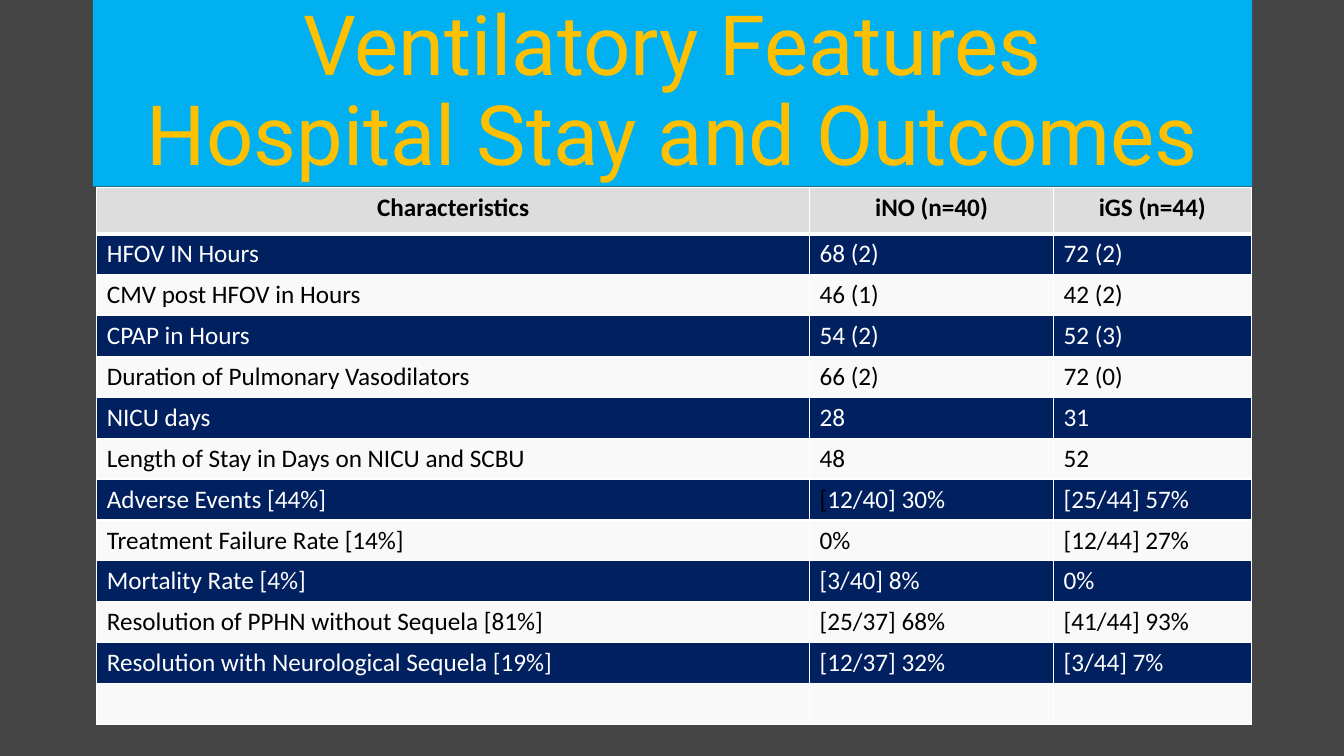
"""Build the slide on ventilatory features, hospital stay and outcomes."""
from dataclasses import dataclass

from lxml.etree import SubElement
from pptx import Presentation
from pptx.dml.color import RGBColor
from pptx.enum.text import MSO_ANCHOR as Anchor, MSO_AUTO_SIZE as AutoSize, PP_ALIGN as Align
from pptx.oxml.ns import qn
from pptx.util import Inches, Pt

WHITE = RGBColor(0xFF, 0xFF, 0xFF)
BLACK = RGBColor(0x00, 0x00, 0x00)
CHARCOAL = RGBColor(0x45, 0x45, 0x45)
SKY = RGBColor(0x00, 0xB0, 0xF0)
AMBER = RGBColor(0xFF, 0xC0, 0x00)
NAVY = RGBColor(0x00, 0x20, 0x60)
PALE = RGBColor(0xF9, 0xF9, 0xF9)
SILVER = RGBColor(0xDD, 0xDD, 0xDD)

COLUMN_WIDTHS = (7.07, 2.42, 1.96)
HEADER_HEIGHT, ROW_HEIGHT = 0.46, 0.4


@dataclass(frozen=True)
class Row:
    label: str = ""
    ino: str = ""
    igs: str = ""
    ino_dark_lead: str = ""


@dataclass(frozen=True)
class RowStyle:
    fill: RGBColor
    color: RGBColor
    bold: bool = False
    align: Align = Align.LEFT


HEADER_STYLE = RowStyle(SILVER, BLACK, True, Align.CENTER)
BAND_STYLES = (RowStyle(PALE, BLACK), RowStyle(NAVY, WHITE))

ROWS = (
    Row("Characteristics", "iNO (n=40)", "iGS (n=44)"),
    Row("HFOV IN Hours", "68 (2)", "72 (2)"),
    Row("CMV post HFOV in Hours", "46 (1)", "42 (2)"),
    Row("CPAP in Hours", "54 (2)", "52 (3)"),
    Row("Duration of Pulmonary Vasodilators", "66 (2)", "72 (0)"),
    Row("NICU days", "28", "31"),
    Row("Length of Stay in Days on NICU and SCBU", "48", "52"),
    Row("Adverse Events [44%]", "12/40] 30%", "[25/44] 57%", "["),
    Row("Treatment Failure Rate [14%]", "0%", "[12/44] 27%"),
    Row("Mortality Rate [4%]", "[3/40] 8%", "0%"),
    Row("Resolution of PPHN without Sequela [81%]", "[25/37] 68%", "[41/44] 93%"),
    Row("Resolution with Neurological Sequela [19%]", "[12/37] 32%", "[3/44] 7%"),
    Row(),
)


def format_font(font, color: RGBColor, **values) -> None:
    for name, value in values.items():
        setattr(font, name, value)
    font.color.rgb = color


def draw_borders(cell, top: float, bottom: float) -> None:
    properties = cell._tc.get_or_add_tcPr()
    widths = {"lnL": 1, "lnR": 1, "lnT": top, "lnB": bottom}
    for position, (side, width) in enumerate(widths.items()):
        line = SubElement(properties, qn(f"a:{side}"), w=str(Pt(width)))
        fill = SubElement(line, qn("a:solidFill"))
        SubElement(fill, qn("a:srgbClr"), val=str(WHITE))
        properties.insert(position, line)


def fill_cell(cell, spans: tuple[tuple[str, RGBColor], ...], style: RowStyle) -> None:
    cell.fill.solid()
    cell.fill.fore_color.rgb = style.fill
    para = cell.text_frame.paragraphs[0]
    para.alignment = style.align
    for text, color in spans:
        if text:
            span = para.add_run()
            span.text = text
            format_font(span.font, color, name="Calibri", size=Pt(18), bold=style.bold)


def draw_title(page) -> None:
    title = page.shapes.title
    bounds = {"left": 0.92, "top": 0, "width": 11.5, "height": 1.85}
    for name, value in bounds.items():
        setattr(title, name, Inches(value))
    title.fill.solid()
    title.fill.fore_color.rgb = SKY
    frame = title.text_frame
    frame.text = "Ventilatory Features\vHospital Stay and Outcomes"
    frame.auto_size = AutoSize.NONE
    frame.word_wrap = True
    frame.vertical_anchor = Anchor.MIDDLE
    para = frame.paragraphs[0]
    para.alignment = Align.CENTER
    para.line_spacing = 0.9
    for span in para.runs:
        format_font(span.font, AMBER, name="Roboto", size=Pt(59.4))


def draw_table(page) -> None:
    height = HEADER_HEIGHT + ROW_HEIGHT * (len(ROWS) - 1)
    table = page.shapes.add_table(
        len(ROWS), len(COLUMN_WIDTHS), Inches(0.96), Inches(1.86),
        Inches(sum(COLUMN_WIDTHS)), Inches(height)).table
    table.first_row = table.horz_banding = False
    for column, width in zip(table.columns, COLUMN_WIDTHS):
        column.width = Inches(width)
    for index, row in enumerate(ROWS):
        table.rows[index].height = Inches(ROW_HEIGHT if index else HEADER_HEIGHT)
        style = BAND_STYLES[index % 2] if index else HEADER_STYLE
        contents = (
            ((row.label, style.color),),
            ((row.ino_dark_lead, BLACK), (row.ino, style.color)),
            ((row.igs, style.color),),
        )
        for cell, spans in zip(table.rows[index].cells, contents):
            fill_cell(cell, spans, style)
            draw_borders(cell, top=3 if index == 1 else 1, bottom=3 if index == 0 else 1)


def main() -> None:
    deck = Presentation()
    deck.slide_width, deck.slide_height = Inches(13.33), Inches(7.5)
    page = deck.slides.add_slide(deck.slide_layouts[5])
    page.background.fill.solid()
    page.background.fill.fore_color.rgb = CHARCOAL
    draw_title(page)
    draw_table(page)
    deck.save("out.pptx")


if __name__ == "__main__":
    main()
